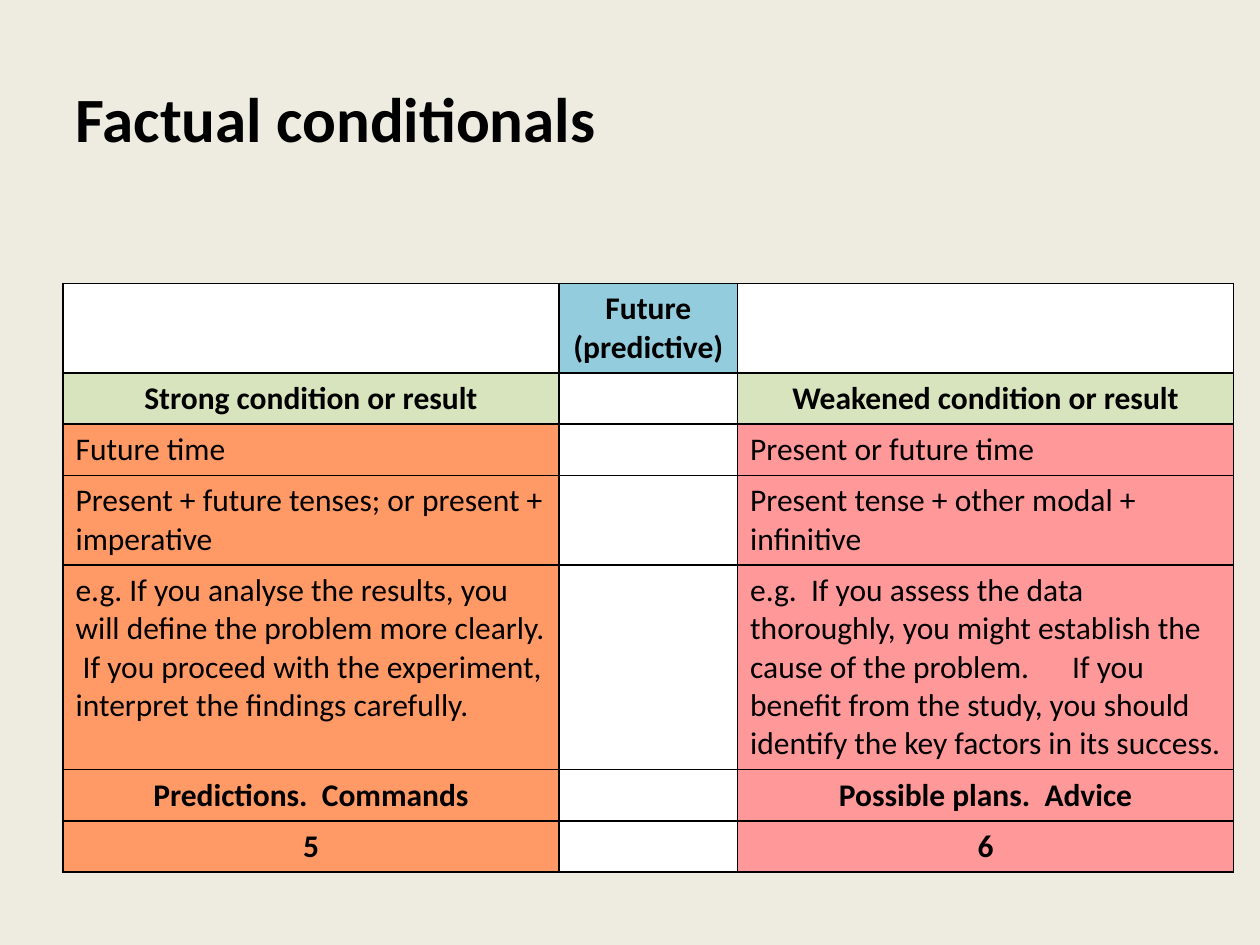
from lxml.etree import SubElement
from pptx import Presentation
from pptx.dml.color import RGBColor
from pptx.enum.text import MSO_ANCHOR, MSO_AUTO_SIZE, PP_ALIGN
from pptx.oxml.ns import qn
from pptx.util import Pt

BLACK = RGBColor(0x00, 0x00, 0x00)
WHITE = RGBColor(0xFF, 0xFF, 0xFF)
CREAM = RGBColor(0xEE, 0xEC, 0xE1)
BLUE = RGBColor(0x93, 0xCD, 0xDD)
GREEN = RGBColor(0xD7, 0xE4, 0xBD)
ORANGE = RGBColor(0xFF, 0x99, 0x66)
PINK = RGBColor(0xFF, 0x99, 0x99)

COL_WIDTHS = (283.5, 102, 283.5)
GAP_TAB = 184
ROWS = (
    (51.2, True, ("", "Future (predictive)", ""), (WHITE, BLUE, WHITE)),
    (29.2, True, ("Strong condition or result", "", "Weakened condition or result"),
     (GREEN, WHITE, GREEN)),
    (29.2, False, ("Future time", "", "Present or future time"), (ORANGE, WHITE, PINK)),
    (51.2, False, ("Present + future tenses; or present + imperative", "",
                   "Present tense + other modal + infinitive"), (ORANGE, WHITE, PINK)),
    (117, False, ("e.g. If you analyse the results, you will define the problem more clearly.  "
                  "If you proceed with the experiment, interpret the findings carefully.", "",
                  "e.g.  If you assess the data thoroughly, you might establish the cause of "
                  "the problem.\tIf you benefit from the study, you should identify the key "
                  "factors in its success."), (ORANGE, WHITE, PINK)),
    (29.2, True, ("Predictions.  Commands", "", "Possible plans.  Advice"),
     (ORANGE, WHITE, PINK)),
    (29.2, True, ("5", "", "6"), (ORANGE, WHITE, PINK)),
)


class Deck:
    """Hold the style and the current slide, and add elements to it."""

    font = {"name": "Calibri", "size": Pt(18), "bold": False}

    def __init__(self):
        self.prs = Presentation()
        self.prs.slide_width, self.prs.slide_height = Pt(720), Pt(540)

    def add_slide(self, color):
        self.s = self.prs.slides.add_slide(self.prs.slide_layouts[5])
        fill = self.s.background.fill
        fill.solid()
        fill.fore_color.rgb = color

    def add_text(self, p, text, align, **changes):
        p.alignment = align
        r = p.add_run()
        r.text = text
        for key, value in {**self.font, **changes}.items():
            setattr(r.font, key, value)
        r.font.color.rgb = BLACK

    def title(self, text, left, top, width, height):
        sp = self.s.shapes.title
        box = {"left": left, "top": top, "width": width, "height": height}
        for key, value in box.items():
            setattr(sp, key, Pt(value))
        tf = sp.text_frame
        tf.auto_size = MSO_AUTO_SIZE.NONE
        tf.vertical_anchor = MSO_ANCHOR.MIDDLE
        self.add_text(tf.paragraphs[0], text, PP_ALIGN.LEFT, size=Pt(36), bold=True)

    def tab_stop(self, p, position):
        tabs = SubElement(p._p.get_or_add_pPr(), qn("a:tabLst"))
        SubElement(tabs, qn("a:tab"), pos=str(Pt(position)), algn="l")

    def borders(self, cell):
        tc_pr = cell._tc.get_or_add_tcPr()
        for side in ("lnL", "lnR", "lnT", "lnB"):
            ln = SubElement(tc_pr, qn(f"a:{side}"), w=str(Pt(1)))
            fill = SubElement(ln, qn("a:solidFill"))
            SubElement(fill, qn("a:srgbClr"), val=str(BLACK))

    def cell(self, cell, text, color, heading):
        self.borders(cell)
        cell.fill.solid()
        cell.fill.fore_color.rgb = color
        if text:
            p = cell.text_frame.paragraphs[0]
            if "\t" in text:
                self.tab_stop(p, GAP_TAB)
            align = PP_ALIGN.CENTER if heading else PP_ALIGN.LEFT
            self.add_text(p, text, align, bold=heading)

    def table(self, rows, widths, left, top):
        height = sum(row[0] for row in rows)
        frame = self.s.shapes.add_table(len(rows), len(widths), Pt(left), Pt(top),
                                        Pt(sum(widths)), Pt(height))
        table = frame.table
        table.first_row = table.horz_banding = False
        for column, width in zip(table.columns, widths):
            column.width = Pt(width)
        for row, (height, heading, texts, colors) in zip(table.rows, rows):
            row.height = Pt(height)
            for cell, text, color in zip(row.cells, texts, colors):
                self.cell(cell, text, color, heading)


def main():
    deck = Deck()
    deck.add_slide(CREAM)
    deck.title("Factual conditionals", 36, 21.6, 648, 90.7)
    deck.table(ROWS, COL_WIDTHS, 36, 162)
    deck.prs.save("out.pptx")


if __name__ == "__main__":
    main()
